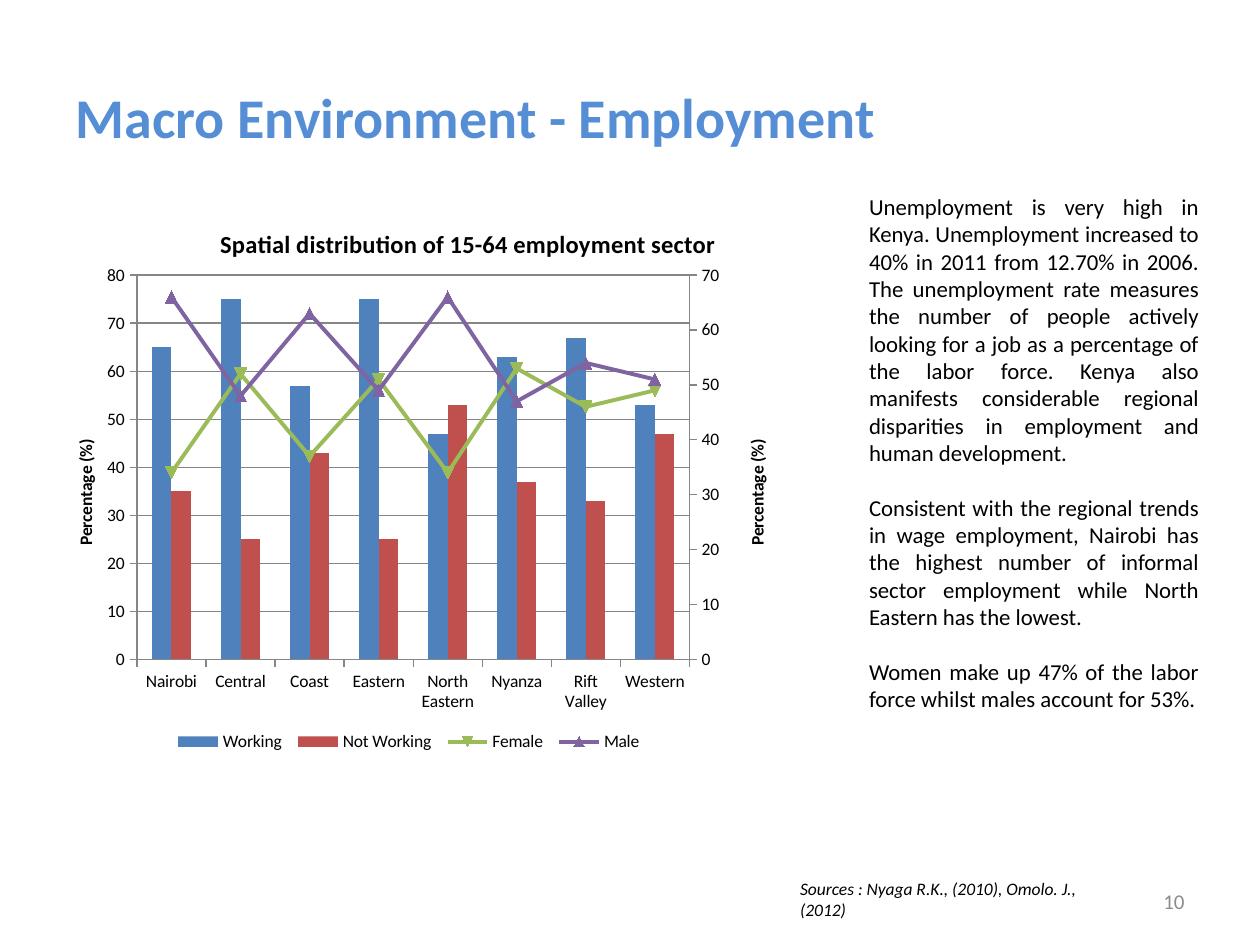
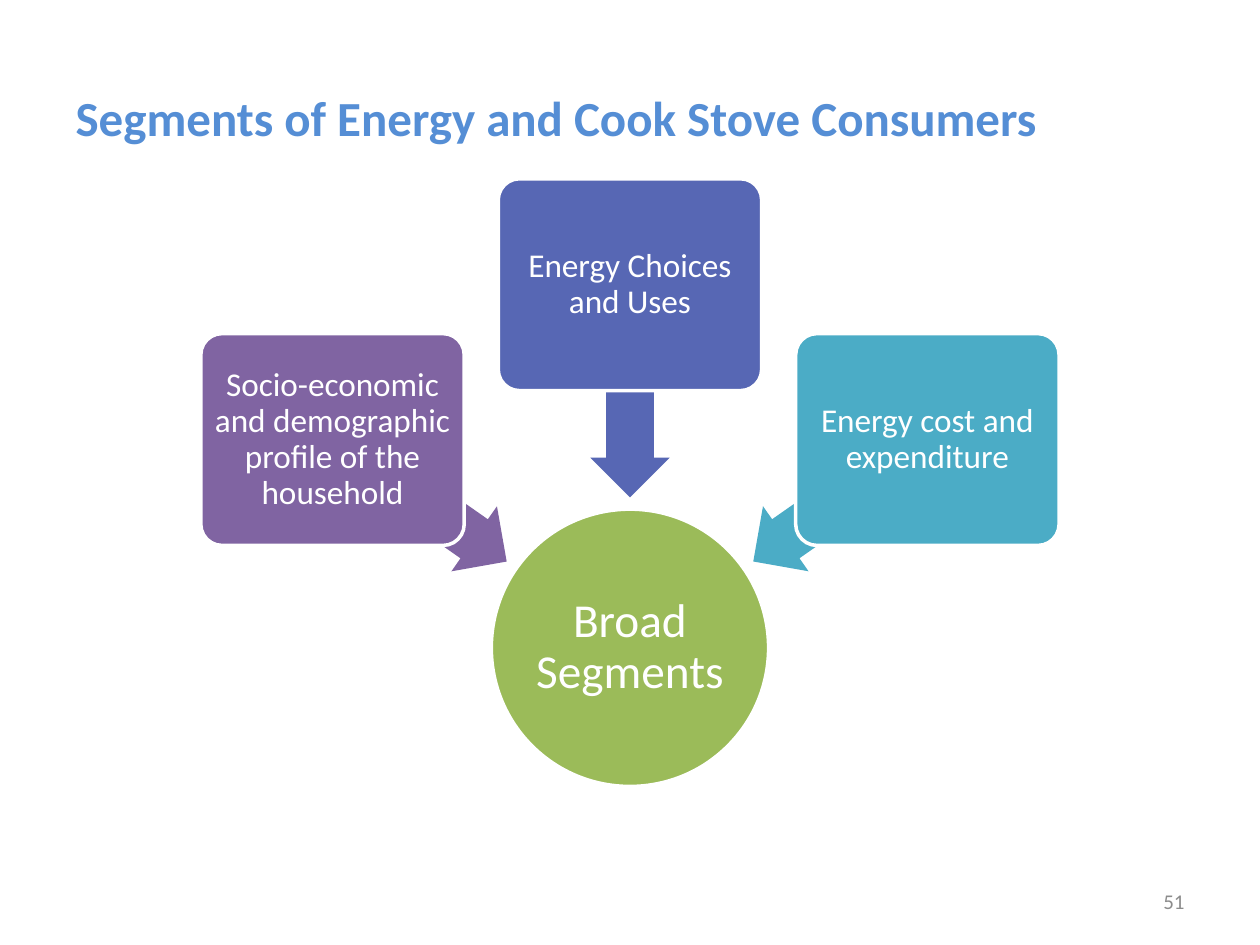
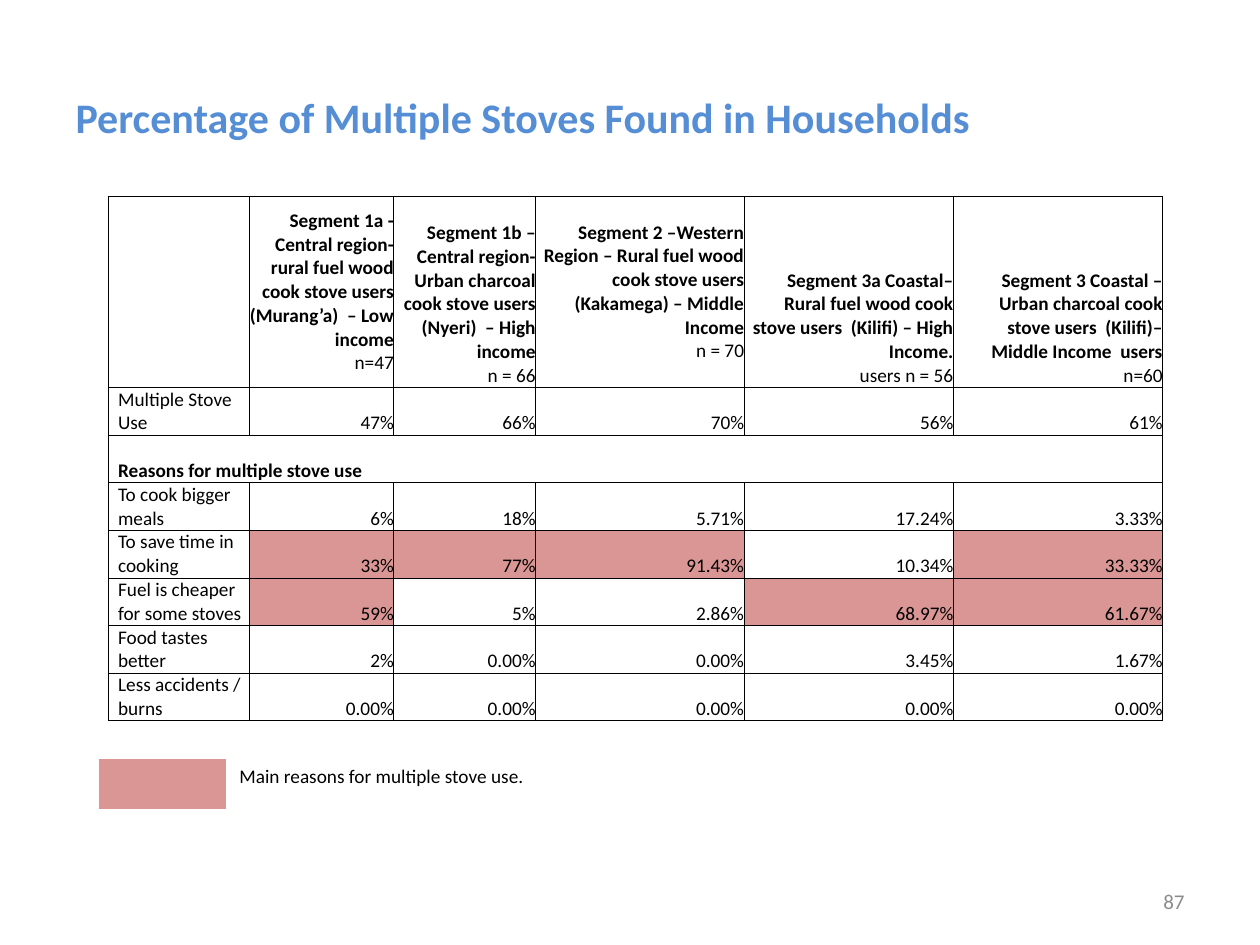
import copy
import math

from pptx import Presentation
from pptx import util as u
from pptx.chart import data as chart_data
from pptx.dml.color import RGBColor
from pptx.enum import chart as charts, shapes, text
from pptx.oxml import ns, parse_xml

FONT = "Calibri"
COLOURS = {
    "title": "558ED5", "ink": "000000", "paper": "FFFFFF", "number": "8C8C8C",
    "grid": "868686", "blue": "4F81BD", "red": "C0504D", "green": "9BBB59",
    "purple": "8064A2", "indigo": "5767B4", "aqua": "4BACC6", "main": "D99694",
}
LEFT, CENTRE, RIGHT, JUSTIFY = (
    text.PP_ALIGN.LEFT, text.PP_ALIGN.CENTER, text.PP_ALIGN.RIGHT, text.PP_ALIGN.JUSTIFY)
MIDDLE, BOTTOM = text.MSO_ANCHOR.MIDDLE, text.MSO_ANCHOR.BOTTOM


def colour(name):
    return RGBColor.from_string(COLOURS[name])


def cms(*lengths):
    return [u.Cm(length) for length in lengths]


def set_margins(holder, *margins):
    """Set left, top, right and bottom margins of a text frame or cell."""
    (holder.margin_left, holder.margin_top,
     holder.margin_right, holder.margin_bottom) = cms(*margins)


def write(frame, lines, size, ink="ink", align=LEFT, bold=False, italic=False,
          gap=0, spacing=None):
    frame.word_wrap = True
    for index, line in enumerate(lines):
        para = frame.paragraphs[0] if index == 0 else frame.add_paragraph()
        para.text = line
        para.alignment = align
        if spacing:
            para.line_spacing = spacing
        if index and gap:
            para.space_before = u.Pt(gap)
        style(para.font, size, ink, bold)
        para.font.italic = italic


def style(font, size, ink="ink", bold=False):
    font.name, font.size, font.bold = FONT, u.Pt(size), bold
    font.color.rgb = colour(ink)


def drop(element, tag):
    """Remove the children with this tag, if there are any."""
    for child in element.findall(ns.qn(tag)):
        element.remove(child)


def set_value(element, tag, value):
    element.find(ns.qn(tag)).set("val", value)


def place(element, after, **fractions):
    """Give a chart part a manual layout, following its child named after."""
    drop(element, "c:layout")
    inner = '<c:layoutTarget val="inner"/>' if after is None else ""
    modes = "".join(f'<c:{key}Mode val="edge"/>' for key in "xy")
    sizes = "".join(f'<c:{key} val="{value}"/>' for key, value in fractions.items())
    layout = parse_xml(f'<c:layout {ns.nsdecls("c")}><c:manualLayout>'
                       f'{inner}{modes}{sizes}</c:manualLayout></c:layout>')
    if after is None:
        element.insert(0, layout)
    else:
        element.find(ns.qn(after)).addnext(layout)


def add_second_axis(chart, line_count, top):
    """Turn the last series into lines on a value axis at the right."""
    plot_area = chart.element.find(".//" + ns.qn("c:plotArea"))
    bars = plot_area.find(ns.qn("c:barChart"))
    lines = parse_xml(
        f'<c:lineChart {ns.nsdecls("c")}><c:grouping val="standard"/>'
        '<c:varyColors val="0"/><c:marker val="1"/>'
        '<c:axId val="5001"/><c:axId val="5002"/></c:lineChart>')
    marker = lines.find(ns.qn("c:marker"))
    for series in bars.findall(ns.qn("c:ser"))[-line_count:]:
        drop(series, "c:invertIfNegative")
        marker.addprevious(series)
    bars.addnext(lines)

    categories = plot_area.find(ns.qn("c:catAx"))
    values = plot_area.find(ns.qn("c:valAx"))
    hidden, right = copy.deepcopy(categories), copy.deepcopy(values)
    for axis, own, other in ((hidden, "5001", "5002"), (right, "5002", "5001")):
        set_value(axis, "c:axId", own)
        set_value(axis, "c:crossAx", other)
    set_value(hidden, "c:delete", "1")
    set_value(right, "c:axPos", "r")
    set_value(right, "c:crosses", "max")
    set_value(right.find(ns.qn("c:scaling")), "c:max", str(top))
    drop(right, "c:majorGridlines")
    values.addnext(right)
    right.addnext(hidden)
    place(values.find(ns.qn("c:title")), "c:tx", x=0.01, y=0.42)
    place(right.find(ns.qn("c:title")), "c:tx", x=0.845, y=0.42)
    place(plot_area, None, x=0.092, y=0.138, w=0.687, h=0.673)


class Deck:
    def __init__(self):
        self.deck = Presentation()
        self.deck.slide_width, self.deck.slide_height = cms(25.4, 19.05)
        self.page = None

    def add_page(self, title, size, number):
        self.page = self.deck.slides.add_slide(self.deck.slide_layouts[5])
        holder = self.page.shapes.title
        holder.left, holder.top, holder.width, holder.height = cms(1.27, 0.76, 22.86, 3.18)
        holder.text_frame.vertical_anchor = MIDDLE
        write(holder.text_frame, [title], size, "title", bold=True)
        self.add_text([str(number)], (18.21, 17.65, 5.92, 1.02), 12,
                      ink="number", align=RIGHT, anchor=MIDDLE)

    def add_text(self, lines, area, size, anchor=text.MSO_ANCHOR.TOP, **options):
        box = self.page.shapes.add_textbox(*cms(*area))
        box.text_frame.vertical_anchor = anchor
        write(box.text_frame, lines, size, **options)

    def add_shape(self, kind, centre, size, fill, outlined=True):
        """Add a preset shape around a centre point."""
        corner = [middle - length / 2 for middle, length in zip(centre, size)]
        shape = self.page.shapes.add_shape(kind, *cms(*corner, *size))
        shape.shadow.inherit = False
        shape.fill.solid()
        shape.fill.fore_color.rgb = colour(fill)
        if outlined:
            shape.line.color.rgb = colour("paper")
            shape.line.width = u.Pt(2)
        else:
            shape.line.fill.background()
        return shape

    def add_label(self, shape, label, size, margin):
        set_margins(shape.text_frame, *[margin] * 4)
        shape.text_frame.vertical_anchor = MIDDLE
        write(shape.text_frame, [label], size, "paper", CENTRE, spacing=0.9)

    def add_table(self, corner, widths, heights):
        frame = self.page.shapes.add_table(
            len(heights), len(widths), *cms(*corner, sum(widths), sum(heights)))
        table = frame.table
        table.first_row = table.horz_banding = False
        for column, width in zip(table.columns, widths):
            column.width = u.Cm(width)
        for row, height in zip(table.rows, heights):
            row.height = u.Cm(height)
        return table

    def fill_cell(self, cell, marked=False, bordered=True):
        if bordered:
            for side in ("lnL", "lnR", "lnT", "lnB"):
                cell._tc.get_or_add_tcPr().append(parse_xml(
                    f'<a:{side} {ns.nsdecls("a")} w="6350"><a:solidFill>'
                    f'<a:srgbClr val="{COLOURS["ink"]}"/></a:solidFill></a:{side}>'))
        if marked:
            cell.fill.solid()
            cell.fill.fore_color.rgb = colour("main")
        else:
            cell.fill.background()

    def add_combined_chart(self, area, title, axis_title, categories, bars, lines, tops):
        """Draw bars on the left axis and lines on the right one."""
        data = chart_data.CategoryChartData()
        data.categories = categories
        for name, _, values in bars + lines:
            data.add_series(name, values)
        chart = self.page.shapes.add_chart(
            charts.XL_CHART_TYPE.COLUMN_CLUSTERED, *cms(*area), data).chart
        style(chart.font, 10)

        chart.has_title = True
        write(chart.chart_title.text_frame, [title], 14, align=CENTRE, bold=True)
        place(chart.element.find(".//" + ns.qn("c:title")), "c:tx", x=0.19, y=0.045)
        chart.has_legend = True
        chart.legend.position = charts.XL_LEGEND_POSITION.BOTTOM
        chart.legend.include_in_layout = False
        place(chart.element.find(".//" + ns.qn("c:legend")), "c:legendPos",
              x=0.13, y=0.92, w=0.6, h=0.07)

        axis = chart.value_axis
        axis.minimum_scale, axis.maximum_scale, axis.major_unit = 0, tops[0], 10
        axis.has_major_gridlines = True
        axis.has_title = True
        frame = axis.axis_title.text_frame
        write(frame, [axis_title], 10, align=CENTRE, bold=True)
        frame._txBody.find(ns.qn("a:bodyPr")).set("rot", "-5400000")
        for border in (axis.format.line, axis.major_gridlines.format.line,
                       chart.category_axis.format.line):
            border.color.rgb = colour("grid")
            border.width = u.Pt(0.75)
        for each in (axis, chart.category_axis):
            each.major_tick_mark = charts.XL_TICK_MARK.OUTSIDE

        add_second_axis(chart, len(lines), tops[1])
        bar_plot, line_plot = chart.plots
        bar_plot.gap_width, bar_plot.overlap = 150, 0
        bar_plot.vary_by_categories = False
        for series, (_, tint, _) in zip(bar_plot.series, bars):
            series.format.fill.solid()
            series.format.fill.fore_color.rgb = colour(tint)
        for series, (_, tint, _) in zip(line_plot.series, lines):
            series.smooth = False
            series.format.line.color.rgb = colour(tint)
            series.format.line.width = u.Pt(2.25)
            series.marker.size = 7
            series.marker.format.fill.solid()
            series.marker.format.fill.fore_color.rgb = colour(tint)
            series.marker.format.line.color.rgb = colour(tint)


def build_employment(deck):
    deck.add_page("Macro Environment - Employment", 32, 10)
    deck.add_combined_chart(
        (1.27, 3.96, 16.21, 11.51),
        "Spatial distribution of 15-64 employment sector", "Percentage (%)",
        ["Nairobi", "Central", "Coast", "Eastern", "North Eastern", "Nyanza",
         "Rift Valley", "Western"],
        bars=[("Working", "blue", (65, 75, 57, 75, 47, 63, 67, 53)),
              ("Not Working", "red", (35, 25, 43, 25, 53, 37, 33, 47))],
        lines=[("Female", "green", (34, 52, 37, 51, 34, 53, 46, 49)),
               ("Male", "purple", (66, 48, 63, 49, 66, 47, 54, 51))],
        tops=(80, 70))
    deck.add_text(
        ["Unemployment is very high in Kenya. Unemployment increased to 40% in 2011 from "
         "12.70% in 2006. The unemployment rate measures the number of people actively "
         "looking for a job as a percentage of the labor force. Kenya also manifests "
         "considerable regional disparities in employment and human development.",
         "Consistent with the regional trends in wage employment, Nairobi has the highest "
         "number of informal sector employment while North Eastern has the lowest.",
         "Women make up 47% of the labor force whilst males account for 53%."],
        (17.27, 3.76, 7.14, 12.22), 13, align=JUSTIFY, gap=15.6)
    deck.add_text(["Sources : Nyaga R.K., (2010), Omolo. J., (2012)"],
                  (15.88, 17.58, 6.15, 1.12), 10, italic=True)


def build_segments(deck):
    deck.add_page("Segments of Energy and Cook Stove Consumers", 28, 51)
    hub = (12.7, 13.06)
    circle = deck.add_shape(shapes.MSO_SHAPE.OVAL, hub, (5.59, 5.59), "green")
    deck.add_label(circle, "Broad Segments", 27, 0.05)
    segments = [
        (215, "purple", "Socio-economic and demographic profile of the household"),
        (270, "indigo", "Energy Choices and Uses"),
        (325, "aqua", "Energy cost and expenditure"),
    ]
    for angle, fill, label in segments:
        turn = math.radians(angle)
        arrow_centre, box_centre = (
            (hub[0] + reach * math.cos(turn), hub[1] + reach * math.sin(turn))
            for reach in (5.18, 7.32))
        arrow = deck.add_shape(shapes.MSO_SHAPE.LEFT_ARROW, arrow_centre, (4.29, 1.6),
                               fill, outlined=False)
        arrow.adjustments[0], arrow.adjustments[1] = 0.6, 0.5
        arrow.rotation = angle
        box = deck.add_shape(shapes.MSO_SHAPE.ROUNDED_RECTANGLE, box_centre, (5.31, 4.27), fill)
        box.adjustments[0] = 0.1
        deck.add_label(box, label, 19, 0.1)


def build_stoves(deck):
    deck.add_page("Percentage of Multiple Stoves Found in Households", 24, 87)
    heads = [
        ("Segment 1a - Central region- rural fuel wood cook stove users (Murang’a)  – Low income",
         "n=47", MIDDLE),
        ("Segment 1b – Central region- Urban charcoal cook stove users (Nyeri)  – High income",
         "n = 66", BOTTOM),
        ("Segment 2 –Western Region – Rural fuel wood cook stove users (Kakamega) – Middle Income",
         "n = 70", MIDDLE),
        ("Segment 3a Coastal– Rural fuel wood cook stove users  (Kilifi) – High Income.",
         "users n = 56", BOTTOM),
        ("Segment 3 Coastal – Urban charcoal cook stove users  (Kilifi)– Middle Income  users",
         "n=60", BOTTOM),
    ]
    rows = [
        ("Multiple Stove Use", "47%", "66%", "70%", "56%", "61%"),
        ("Reasons for multiple stove use",),
        ("To cook bigger meals", "6%", "18%", "5.71%", "17.24%", "3.33%"),
        ("To save time in cooking", "33%", "77%", "91.43%", "10.34%", "33.33%"),
        ("Fuel is cheaper for some stoves", "59%", "5%", "2.86%", "68.97%", "61.67%"),
        ("Food tastes better", "2%", "0.00%", "0.00%", "3.45%", "1.67%"),
        ("Less accidents / burns", "0.00%", "0.00%", "0.00%", "0.00%", "0.00%"),
    ]
    main_reasons = {(4, 1), (4, 2), (4, 3), (4, 5), (5, 1), (5, 4), (5, 5)}
    table = deck.add_table((2.18, 3.96), [2.84, 2.92, 2.86, 4.2, 4.22, 4.22],
                           [3.85] + [0.96] * len(rows))
    for row in range(len(rows) + 1):
        for column in range(len(heads) + 1):
            cell = table.cell(row, column)
            set_margins(cell, 0 if column else 0.2, 0, 0, 0)
            cell.vertical_anchor = BOTTOM
            deck.fill_cell(cell, (row, column) in main_reasons)
    for column, (head, count, anchor) in enumerate(heads, 1):
        cell = table.cell(0, column)
        cell.vertical_anchor = anchor
        write(cell.text_frame, [head, count], 11, align=RIGHT)
        cell.text_frame.paragraphs[0].font.bold = True
    for row, values in enumerate(rows, 1):
        alone = len(values) == 1
        if alone:
            table.cell(row, 0).merge(table.cell(row, len(heads)))
        for column, value in enumerate(values):
            write(table.cell(row, column).text_frame, [value], 11,
                  align=RIGHT if column else LEFT, bold=alone)

    key = deck.add_table((1.98, 15.29), [2.59, 14.35], [1.04])
    swatch, meaning = key.cell(0, 0), key.cell(0, 1)
    deck.fill_cell(swatch, marked=True, bordered=False)
    deck.fill_cell(meaning, bordered=False)
    write(meaning.text_frame, ["Main reasons for multiple stove use."], 11)


def main():
    deck = Deck()
    build_employment(deck)
    build_segments(deck)
    build_stoves(deck)
    deck.deck.save("out.pptx")


if __name__ == "__main__":
    main()
